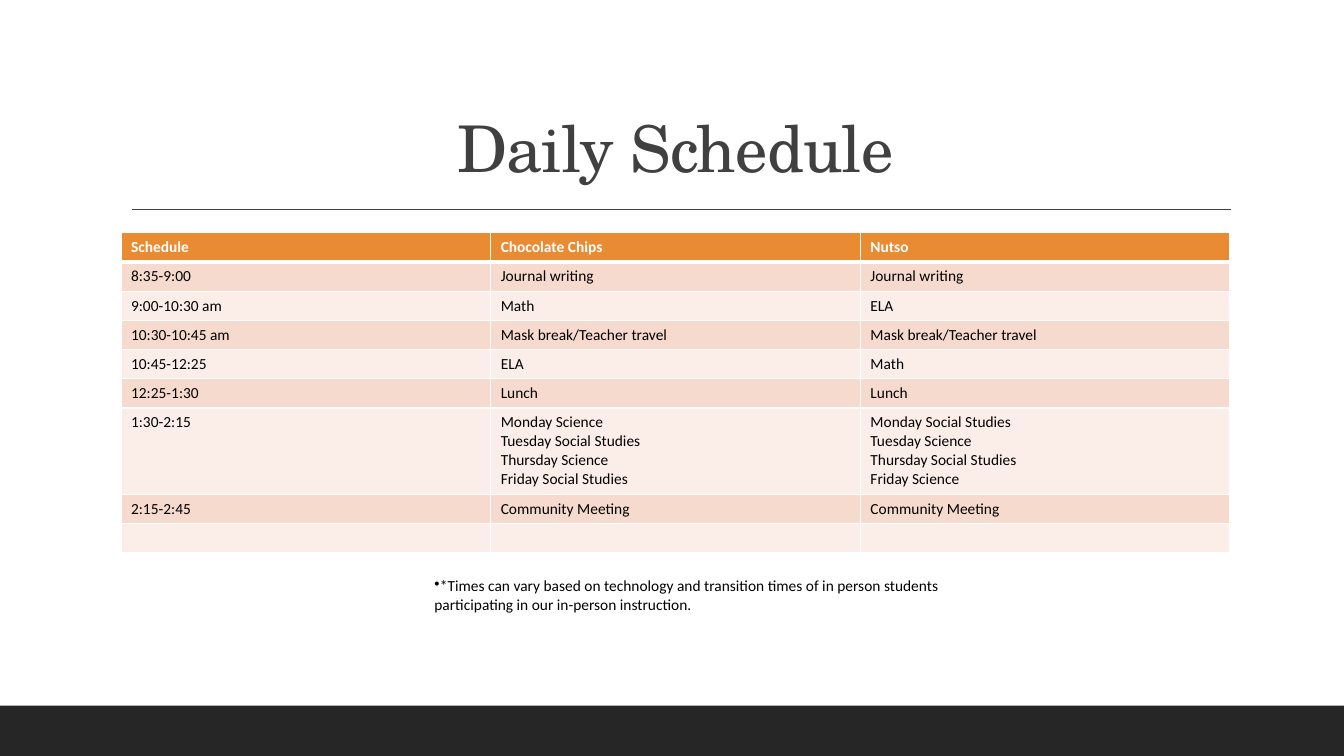
from lxml import etree
from pptx import Presentation
from pptx.dml.color import RGBColor
from pptx.enum.shapes import MSO_CONNECTOR, MSO_SHAPE
from pptx.enum.text import MSO_ANCHOR, PP_ALIGN
from pptx.oxml.ns import qn
from pptx.util import Inches, Pt

STRAIGHT = MSO_CONNECTOR.STRAIGHT
RECTANGLE = MSO_SHAPE.RECTANGLE
BOTTOM = MSO_ANCHOR.BOTTOM
CENTER = PP_ALIGN.CENTER

WHITE = RGBColor(0xFF, 0xFF, 0xFF)
BLACK = RGBColor(0x00, 0x00, 0x00)
CHARCOAL = RGBColor(0x26, 0x26, 0x26)
GRAY = RGBColor(0x40, 0x40, 0x40)
ORANGE = RGBColor(0xE8, 0x8B, 0x33)
PEACH = RGBColor(0xF6, 0xDA, 0xCE)
PALE_PEACH = RGBColor(0xFB, 0xEE, 0xE8)

TITLE_FONT = "TeX Gyre Schola"
BODY_FONT = "Calibri"
BODY_SIZE = Pt(11)

SCHEDULE = [
    ("Schedule", "Chocolate Chips", "Nutso"),
    ("8:35-9:00", "Journal writing", "Journal writing"),
    ("9:00-10:30 am", "Math", "ELA"),
    ("10:30-10:45 am", "Mask break/Teacher travel", "Mask break/Teacher travel"),
    ("10:45-12:25", "ELA", "Math"),
    ("12:25-1:30", "Lunch", "Lunch"),
    (
        "1:30-2:15",
        "Monday Science\nTuesday Social Studies\nThursday Science\nFriday Social Studies",
        "Monday Social Studies\nTuesday Science\nThursday Social Studies\nFriday Science",
    ),
    ("2:15-2:45", "Community Meeting", "Community Meeting"),
    ("", "", ""),
]
NOTE = (
    "*Times can vary based on technology and transition times of in person "
    "students participating in our in-person instruction."
)


def set_font(paragraph, name, size, color, bold=False):
    font = paragraph.font
    font.name, font.size, font.bold = name, size, bold
    font.color.rgb = color


def add_footer_bar(slide):
    bar = slide.shapes.add_shape(
        RECTANGLE, Inches(0), Inches(7), Inches(13.33), Inches(0.5))
    bar.shadow.inherit = False
    bar.fill.solid()
    bar.fill.fore_color.rgb = CHARCOAL
    bar.line.fill.background()


def add_title_rule(slide):
    rule = slide.shapes.add_connector(
        STRAIGHT, Inches(1.31), Inches(2.08), Inches(12.21), Inches(2.08))
    rule.line.color.rgb = GRAY
    rule.line.width = Pt(1)
    etree.SubElement(rule._element.spPr, qn("a:effectLst"))


def format_title(slide, text):
    title = slide.shapes.title
    title.left, title.top = Inches(1.2), Inches(0.31)
    title.width, title.height = Inches(11), Inches(1.59)
    title.text_frame.vertical_anchor = BOTTOM
    paragraph = title.text_frame.paragraphs[0]
    run = paragraph.add_run()
    run.text = text
    run._r.get_or_add_rPr().set("spc", "-50")
    paragraph.alignment = CENTER
    paragraph.line_spacing = 0.9
    set_font(paragraph, TITLE_FONT, Pt(46), GRAY)


def set_borders(cell, bottom_width):
    properties = cell._tc.get_or_add_tcPr()
    widths = {"lnL": Pt(1), "lnR": Pt(1), "lnT": Pt(1), "lnB": bottom_width}
    for side, width in widths.items():
        line = etree.SubElement(properties, qn(f"a:{side}"), w=str(width))
        fill = etree.SubElement(line, qn("a:solidFill"))
        etree.SubElement(fill, qn("a:srgbClr"), val=str(WHITE))


def fill_cell(cell, text, fill, color, is_header):
    set_borders(cell, Pt(3) if is_header else Pt(1))
    cell.fill.solid()
    cell.fill.fore_color.rgb = fill
    cell.text = text
    for paragraph in cell.text_frame.paragraphs:
        set_font(paragraph, BODY_FONT, BODY_SIZE, color, is_header)
        # The end mark keeps empty rows at the body size
        etree.SubElement(paragraph._p, qn("a:endParaRPr"),
                         sz=str(int(BODY_SIZE.pt * 100)))


def add_schedule(slide, rows):
    table = slide.shapes.add_table(
        len(rows), len(rows[0]),
        Inches(1.2), Inches(2.31), Inches(11), Inches(3.17)).table
    for row_index, texts in enumerate(rows):
        is_tall = any("\n" in text for text in texts)
        table.rows[row_index].height = Inches(0.85 if is_tall else 0.29)
        is_header = row_index == 0
        band = PEACH if row_index % 2 else PALE_PEACH
        fill, color = (ORANGE, WHITE) if is_header else (band, BLACK)
        for column_index, text in enumerate(texts):
            fill_cell(table.cell(row_index, column_index),
                      text, fill, color, is_header)


def add_note(slide, text):
    box = slide.shapes.add_textbox(
        Inches(4.21), Inches(5.67), Inches(5.98), Inches(0.66))
    box.text_frame.word_wrap = True
    paragraph = box.text_frame.paragraphs[0]
    paragraph.text = text
    set_font(paragraph, BODY_FONT, BODY_SIZE, BLACK)
    bullet = etree.Element(qn("a:buChar"), char="•")
    paragraph._p.get_or_add_pPr().insert(0, bullet)


def main():
    presentation = Presentation()
    presentation.slide_width = Inches(13.33)
    presentation.slide_height = Inches(7.5)
    title_only = presentation.slide_layouts[5]
    slide = presentation.slides.add_slide(title_only)

    # Frame
    add_footer_bar(slide)
    add_title_rule(slide)

    # Content
    format_title(slide, "Daily Schedule")
    add_schedule(slide, SCHEDULE)
    add_note(slide, NOTE)

    presentation.save("out.pptx")


if __name__ == "__main__":
    main()
